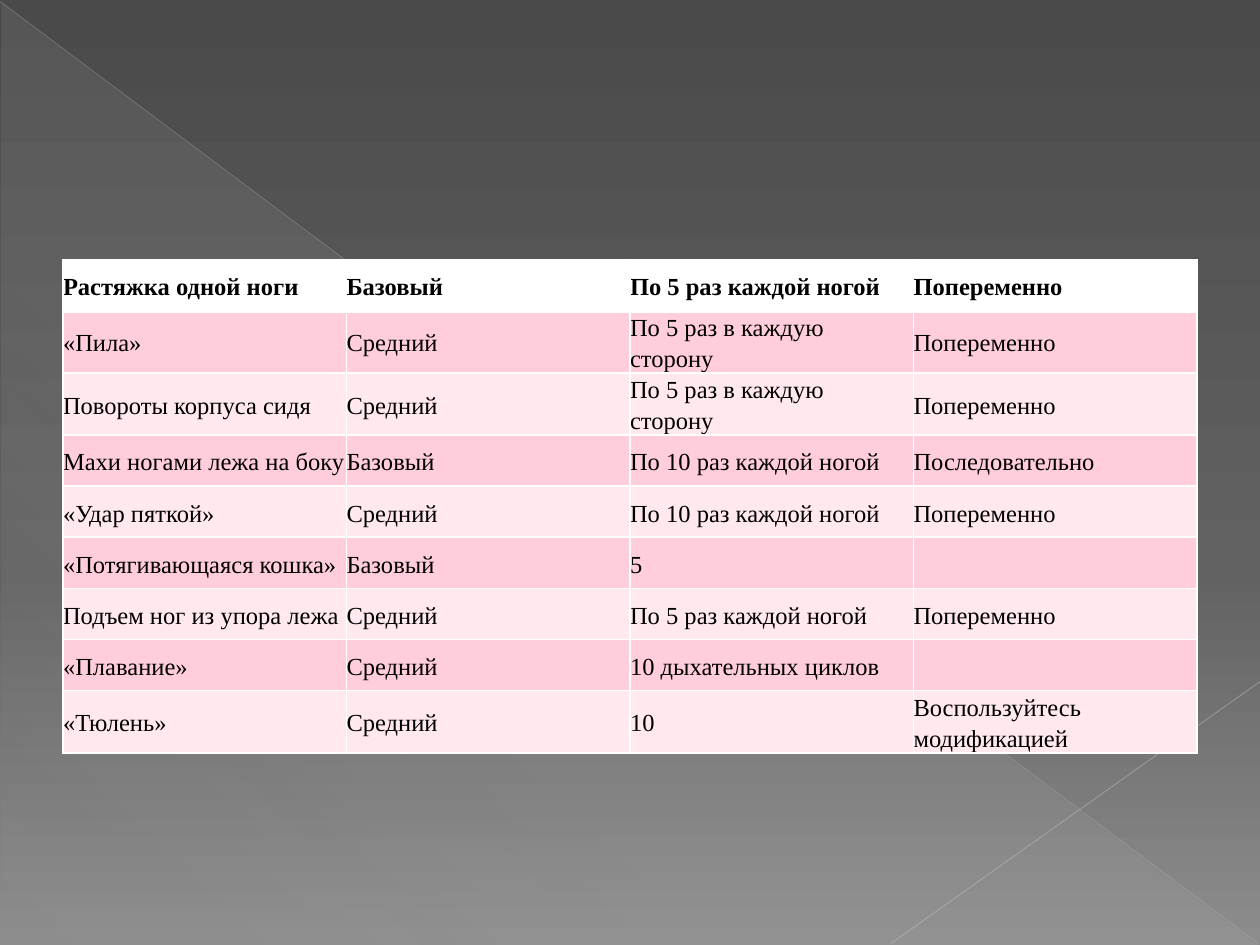
from lxml.etree import SubElement
from pptx import Presentation
from pptx.dml.color import RGBColor
from pptx.enum.shapes import MSO_CONNECTOR, MSO_SHAPE
from pptx.enum.text import MSO_ANCHOR
from pptx.oxml.ns import qn
from pptx.util import Cm, Pt

# Content
EXERCISES = [
    ("Растяжка одной ноги", "Базовый", "По 5 раз каждой ногой", "Попеременно"),
    ("«Пила»", "Средний", "По 5 раз в каждую сторону", "Попеременно"),
    ("Повороты корпуса сидя", "Средний", "По 5 раз в каждую сторону", "Попеременно"),
    ("Махи ногами лежа на боку", "Базовый", "По 10 раз каждой ногой", "Последовательно"),
    ("«Удар пяткой»", "Средний", "По 10 раз каждой ногой", "Попеременно"),
    ("«Потягивающаяся кошка»", "Базовый", "5", ""),
    ("Подъем ног из упора лежа", "Средний", "По 5 раз каждой ногой", "Попеременно"),
    ("«Плавание»", "Средний", "10 дыхательных циклов", ""),
    ("«Тюлень»", "Средний", "10", "Воспользуйтесь модификацией"),
]
COLORS = {
    "text": "000000", "header": "FFFFFF", "border": "FFFFFF",
    "odd": "FFCEDA", "even": "FFE8EE",
    "top": "4A4A4A", "middle": "626262", "bottom": "8C8C8C",
    "triangle": "D2D2D2", "falling": "BFBFBF", "rising": "C6C6C6",
}
# Gradient stops: position %, colour, opacity %
BACKDROP = [(0, "top", 100), (60, "middle", 100), (100, "bottom", 100)]
GLOW = [(0, "triangle", 10), (70, "triangle", 8), (100, "triangle", 1)]
# Start x, y, end x, y in cm, colour, width in points, opacity %
DIAGONALS = [
    (0, 0.03, 25.37, 19.02, "falling", 0.39, 35),
    (25.4, 13.74, 17.96, 19.02, "rising", 0.47, 45),
]
TABLE_LEFT, TABLE_TOP, COLUMN_WIDTH, ROW_HEIGHT = 1.27, 5.23, 5.715, 1.03


def add_color(parent, color, opacity=100):
    srgb = SubElement(parent, qn("a:srgbClr"), val=COLORS[color])
    if opacity < 100:
        SubElement(srgb, qn("a:alpha"), val=str(opacity * 1000))


def set_gradient(owner, fill, stops, angle):
    fill.gradient()
    gradient = owner.element.find(".//" + qn("a:gradFill"))
    stop_list = gradient.find(qn("a:gsLst"))
    for stop in list(stop_list):
        stop_list.remove(stop)
    for position, color, opacity in stops:
        stop = SubElement(stop_list, qn("a:gs"), pos=str(position * 1000))
        add_color(stop, color, opacity)
    gradient.find(qn("a:lin")).set("ang", str(angle * 60000))


def add_diagonal(slide, x1, y1, x2, y2, color, width, opacity):
    diagonal = slide.shapes.add_connector(
        MSO_CONNECTOR.STRAIGHT, Cm(x1), Cm(y1), Cm(x2), Cm(y2))
    diagonal.line.width = Pt(width)
    diagonal.line.fill.solid()
    solid = diagonal.line.fill._xPr.find(qn("a:solidFill"))
    add_color(solid, color, opacity)
    SubElement(diagonal.element.spPr, qn("a:effectLst"))


def set_borders(cell, **widths):
    properties = cell._tc.get_or_add_tcPr()
    for side in "LRTB":
        border = SubElement(properties, qn("a:ln" + side),
                            w=str(Pt(widths.get(side, 1))))
        add_color(SubElement(border, qn("a:solidFill")), "border")


def write(cell, text, size=14, font="Times New Roman", color="text", bold=False):
    cell.vertical_anchor = MSO_ANCHOR.MIDDLE
    cell.margin_left = cell.margin_right = cell.margin_top = cell.margin_bottom = 0
    paragraph = cell.text_frame.paragraphs[0]
    paragraph.line_spacing = 1.15
    if text:
        run = paragraph.add_run()
        run.text = text
        run.font.size, run.font.name, run.font.bold = Pt(size), font, bold
        run.font.color.rgb = RGBColor.from_string(COLORS[color])


def add_exercises(slide):
    row_count, column_count = len(EXERCISES), len(EXERCISES[0])
    plan = slide.shapes.add_table(
        row_count, column_count, Cm(TABLE_LEFT), Cm(TABLE_TOP),
        Cm(column_count * COLUMN_WIDTH), Cm(row_count * ROW_HEIGHT)).table
    for column in plan.columns:
        column.width = Cm(COLUMN_WIDTH)
    for r, exercise in enumerate(EXERCISES):
        plan.rows[r].height = Cm(ROW_HEIGHT)
        is_header = r == 0
        band = "header" if is_header else "odd" if r % 2 else "even"
        for c, text in enumerate(exercise):
            cell = plan.cell(r, c)
            set_borders(cell, B=3 if is_header else 1)
            cell.fill.solid()
            cell.fill.fore_color.rgb = RGBColor.from_string(COLORS[band])
            write(cell, text, bold=is_header)


def main():
    prs = Presentation()
    prs.slide_width, prs.slide_height = Cm(25.4), Cm(19.05)
    slide = prs.slides.add_slide(prs.slide_layouts[6])

    # Backdrop
    set_gradient(slide, slide.background.fill, BACKDROP, 90)
    triangle = slide.shapes.add_shape(
        MSO_SHAPE.RIGHT_TRIANGLE, Cm(0.03), Cm(0.05), Cm(25.35), Cm(19))
    triangle.shadow.inherit = False
    triangle.line.fill.background()
    set_gradient(triangle, triangle.fill, GLOW, 133)
    for diagonal in DIAGONALS:
        add_diagonal(slide, *diagonal)

    # Exercise table
    add_exercises(slide)
    prs.save("out.pptx")


if __name__ == "__main__":
    main()
